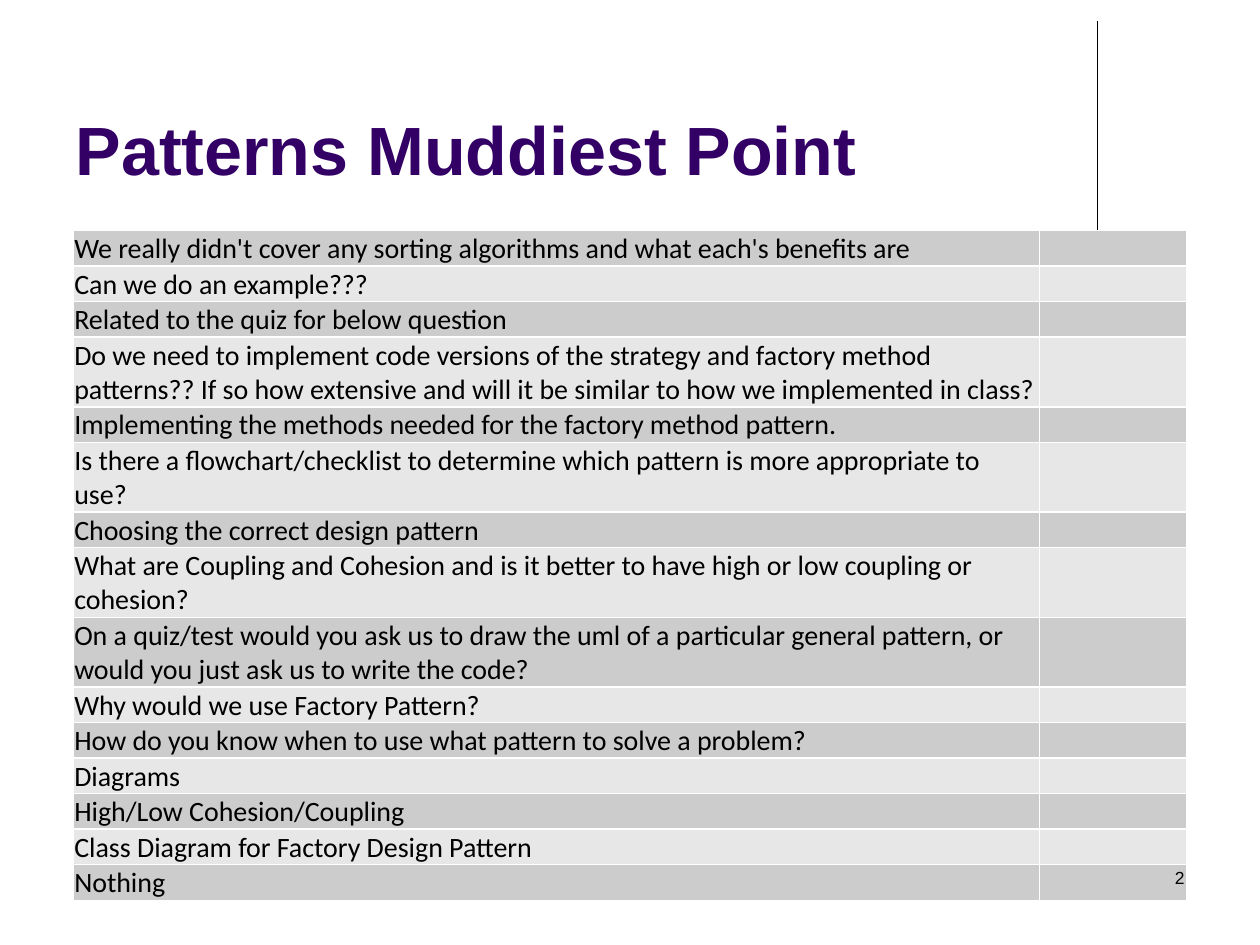
from lxml.etree import SubElement
from pptx import Presentation
from pptx.dml.color import RGBColor
from pptx.enum.shapes import MSO_CONNECTOR
from pptx.enum.text import MSO_ANCHOR, MSO_AUTO_SIZE, PP_ALIGN
from pptx.oxml.ns import qn
from pptx.util import Inches, Pt

TITLE = "Patterns Muddiest Point"
QUESTIONS = [
    ("We really didn't cover any sorting algorithms and what each's benefits are", 1),
    ("Can we do an example???", 1),
    ("Related to the quiz for below question", 1),
    ("Do we need to implement code versions of the strategy and factory method patterns?? "
     "If so how extensive and will it be similar to how we implemented in class?", 2),
    ("Implementing the methods needed for the factory method pattern.", 1),
    ("Is there a flowchart/checklist to determine which pattern is more appropriate to use?", 2),
    ("Choosing the correct design pattern", 1),
    ("What are Coupling and Cohesion and is it better to have high or low coupling or cohesion?", 2),
    ("On a quiz/test would you ask us to draw the uml of a particular general pattern, "
     "or would you just ask us to write the code?", 2),
    ("Why would we use Factory Pattern?", 1),
    ("How do you know when to use what pattern to solve a problem?", 1),
    ("Diagrams", 1),
    ("High/Low Cohesion/Coupling", 1),
    ("Class Diagram for Factory Design Pattern", 1),
    ("Nothing", 1),
]
SLIDE_NUMBER = "2"
BANDS = ["CCCCCC", "E7E7E7"]
COLUMNS = [7.67, 1.17]
LINE_HEIGHT = 0.27
ROW_PADDING = 0.01
TABLE_LEFT, TABLE_TOP = 0.58, 1.83
TEXT_SIZE = 16


def color(value):
    return RGBColor.from_string(value)


def add_text(paragraph, text, size, font, value, bold=False):
    run = paragraph.add_run()
    run.text = text
    run.font.size = Pt(size)
    run.font.name = font
    run.font.bold = bold
    run.font.color.rgb = color(value)


def add_rule(slide):
    rule = slide.shapes.add_connector(
        MSO_CONNECTOR.STRAIGHT, Inches(8.71), Inches(0.17), Inches(8.71), Inches(TABLE_TOP))
    rule.line.color.rgb = color("000000")
    rule.line.width = Pt(0.75)
    SubElement(rule.element.spPr, qn("a:effectLst"))


def add_title(slide):
    title = slide.shapes.title
    title.left, title.top = Inches(0.5), Inches(0.13)
    title.width, title.height = Inches(8.25), Inches(1.42)
    frame = title.text_frame
    frame.word_wrap = True
    frame.auto_size = MSO_AUTO_SIZE.NONE
    frame.vertical_anchor = MSO_ANCHOR.BOTTOM
    paragraph = frame.paragraphs[0]
    paragraph.alignment = PP_ALIGN.LEFT
    add_text(paragraph, TITLE, 39, "Arial", "330066", True)


def style_cell(cell, fill):
    cell.fill.solid()
    cell.fill.fore_color.rgb = color(fill)
    cell.margin_left = cell.margin_right = cell.margin_top = Inches(0.01)
    cell.margin_bottom = 0
    cell.vertical_anchor = MSO_ANCHOR.BOTTOM


def add_questions(slide):
    heights = [lines * LINE_HEIGHT + ROW_PADDING for _, lines in QUESTIONS]
    table = slide.shapes.add_table(
        len(QUESTIONS), len(COLUMNS), Inches(TABLE_LEFT), Inches(TABLE_TOP),
        Inches(sum(COLUMNS)), Inches(sum(heights))).table
    table.first_row = table.horz_banding = False
    for column, width in zip(table.columns, COLUMNS):
        column.width = Inches(width)
    for index, (question, _) in enumerate(QUESTIONS):
        row = table.rows[index]
        row.height = Inches(heights[index])
        for cell in row.cells:
            style_cell(cell, BANDS[index % len(BANDS)])
        question_cell, empty_cell = row.cells
        add_text(question_cell.text_frame.paragraphs[0], question, TEXT_SIZE, "Calibri", "000000")
        empty_paragraph = empty_cell.text_frame.paragraphs[0]
        SubElement(empty_paragraph._p, qn("a:endParaRPr"), sz=str(TEXT_SIZE * 100))


def add_slide_number(slide):
    box = slide.shapes.add_textbox(Inches(7.17), Inches(6.83), Inches(2.33), Inches(0.5))
    box.text_frame.word_wrap = True
    paragraph = box.text_frame.paragraphs[0]
    paragraph.alignment = PP_ALIGN.RIGHT
    add_text(paragraph, SLIDE_NUMBER, 10, "Arial", "000000")


def main():
    presentation = Presentation()
    presentation.slide_width, presentation.slide_height = Inches(10), Inches(7.5)
    slide = presentation.slides.add_slide(presentation.slide_layouts[5])
    add_rule(slide)
    add_title(slide)
    add_questions(slide)
    add_slide_number(slide)
    presentation.save("out.pptx")


if __name__ == "__main__":
    main()
